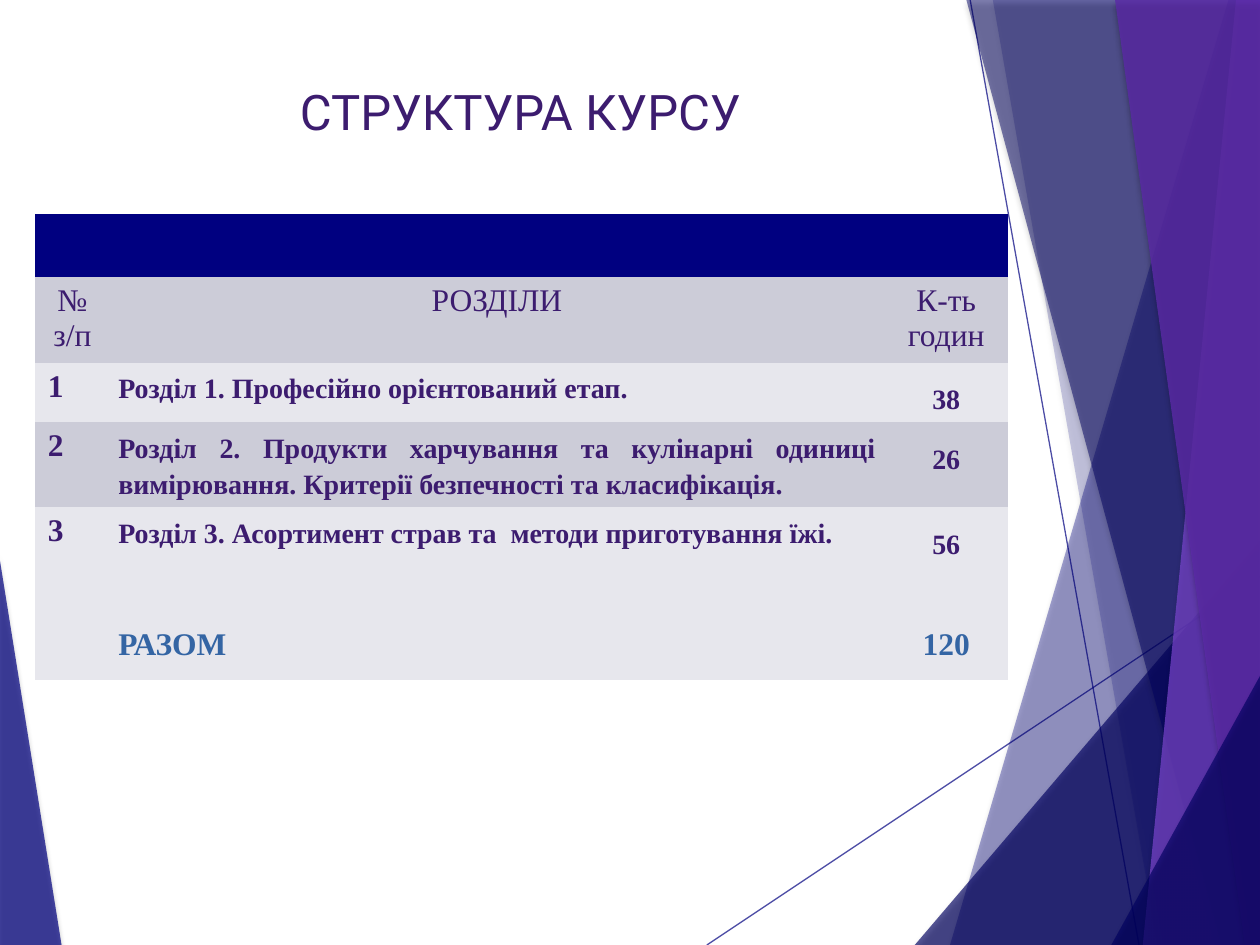
from typing import NamedTuple, Optional

from lxml import etree
from pptx import Presentation
from pptx import util as u
from pptx.dml.color import RGBColor
from pptx.enum import shapes, text
from pptx.oxml.ns import qn

W, H = u.Inches(10), u.Inches(7.5)
NAVY, DEEP, INK, BLUE = "000080", "000060", "3C1C6F", "3465A4"
DARK_ROW, LIGHT_ROW = "CCCCD8", "E7E7ED"
SERIF = "Times New Roman"
NO_STYLE = "{2D5ABB26-0587-4C30-8999-92F81FD0307C}"
LEFT, CENTER, JUSTIFY = (text.PP_ALIGN.LEFT, text.PP_ALIGN.CENTER,
                         text.PP_ALIGN.JUSTIFY)


class Shard(NamedTuple):
    """A translucent polygon; points are percent of the slide."""
    color: str
    alpha: int
    points: list


class Entry(NamedTuple):
    """The text of one table cell."""
    words: str
    align: text.PP_ALIGN = CENTER
    size: int = 18
    bold: bool = True
    color: str = INK
    spacing: Optional[float] = None
    after: int = 0
    inset: float = 0.07
    middle: bool = False


def x(share: float) -> int:
    return round(W * share / 100)


def y(share: float) -> int:
    return round(H * share / 100)


def rgb(color: str) -> RGBColor:
    return RGBColor.from_string(color)


def set_alpha(parent, alpha: int) -> None:
    clr = next(parent.iter(qn("a:srgbClr")))
    etree.SubElement(clr, qn("a:alpha"), val=str(alpha * 1000))


def draw_shard(s, shard: Shard) -> None:
    start, *rest = [(x(px), y(py)) for px, py in shard.points]
    fb = s.shapes.build_freeform(*start)
    fb.add_line_segments(rest, close=True)
    sp = fb.convert_to_shape()
    sp.fill.solid()
    sp.fill.fore_color.rgb = rgb(shard.color)
    sp.line.fill.background()
    sp.shadow.inherit = False
    props = sp._element.spPr
    set_alpha(props, shard.alpha)
    shadow = etree.SubElement(
        props.find(qn("a:effectLst")), qn("a:outerShdw"),
        blurRad=str(u.Pt(3)), dist=str(u.Pt(2)), dir="5400000")
    etree.SubElement(shadow, qn("a:srgbClr"), val="000000")
    set_alpha(shadow, 35)


def draw_line(s, x1: float, y1: float, x2: float, y2: float) -> None:
    line = s.shapes.add_connector(shapes.MSO_CONNECTOR.STRAIGHT,
                                  x(x1), y(y1), x(x2), y(y2))
    line.line.color.rgb = rgb(NAVY)
    line.line.width = u.Pt(0.75)
    props = line._element.spPr
    set_alpha(props, 70)
    etree.SubElement(props, qn("a:effectLst"))


def style(p, align, size: int, font: str, color: str, bold: bool) -> None:
    p.alignment = align
    p.font.size, p.font.name, p.font.bold = u.Pt(size), font, bold
    p.font.color.rgb = rgb(color)


def fill_cell(cell, color: str, entry: Optional[Entry]) -> None:
    cell.fill.solid()
    cell.fill.fore_color.rgb = rgb(color)
    if entry is None:
        return
    cell.margin_left = cell.margin_right = u.Inches(entry.inset)
    if entry.middle:
        cell.vertical_anchor = text.MSO_ANCHOR.MIDDLE
    p = cell.text_frame.paragraphs[0]
    p.text = entry.words
    style(p, entry.align, entry.size, SERIF, entry.color, entry.bold)
    if entry.spacing:
        p.line_spacing = entry.spacing
        p.space_after = u.Pt(entry.after)


def heading(words: str) -> Entry:
    return Entry(words, bold=False, inset=0.1)


def section(number: int, title: str, hours: int, **hours_style) -> list:
    return [Entry(str(number), LEFT, inset=0.1),
            Entry(title, JUSTIFY, 16, spacing=1.15, after=10),
            Entry(str(hours), size=16, spacing=1.5, **hours_style)]


LEFT_SHARD = Shard(NAVY, 70, [(-0.1, 58.5), (4.9, 100.1), (-0.1, 100)])
RIGHT_SHARDS = [
    Shard(NAVY, 36, [(97.5, 0), (75.4, 100), (100.1, 100), (100.1, 0)]),
    Shard(NAVY, 20, [(78.8, 0), (91.9, 100), (100.1, 100), (100.1, 0)]),
    Shard(DEEP, 66, [(72.6, 100), (100, 57.2), (100.1, 100)]),
    Shard(DEEP, 50, [(76.7, 0), (96.9, 100), (100.1, 100), (100.1, 0)]),
    Shard("7B46D0", 70, [(98.1, 0), (90.7, 100), (100.1, 100), (100, 0)]),
    Shard("5A2AA6", 82, [(88.5, 0), (98.8, 100), (100.2, 100), (100, 0)]),
    Shard(DEEP, 66, [(88.2, 100), (100.1, 71.3), (100.2, 100)]),
]
LINES = [(56.1, 100, 100.1, 60.9), (77, 0, 90.4, 100)]

COLUMNS = [5.9, 61.5, 9.8]  # percent of slide width
# Each row: height in percent of slide height, fill, cell texts
ROWS = [
    (6.67, NAVY, [None] * 3),
    (9.1, DARK_ROW, [heading("№ з/п"), heading("РОЗДІЛИ"),
                     heading("К-ть годин")]),
    (6.25, LIGHT_ROW, section(1, "Розділ 1. Професійно орієнтований етап.",
                              38, after=10, middle=True)),
    (9, DARK_ROW, section(2, "Розділ 2. Продукти харчування та кулінарні "
                          "одиниці вимірювання. Критерії безпечності та "
                          "класифікація.", 26)),
    (6.2, LIGHT_ROW, section(3, "Розділ 3. Асортимент страв та  методи "
                             "приготування їжі.", 56)),
    (5.8, LIGHT_ROW, [None] * 3),
    (6.2, LIGHT_ROW, [None, Entry("РАЗОМ", LEFT, color=BLUE),
                      Entry("120", color=BLUE)]),
]


def draw_table(s) -> None:
    frame = s.shapes.add_table(
        len(ROWS), len(COLUMNS), x(2.8), y(22.65), x(sum(COLUMNS)),
        y(sum(height for height, _, _ in ROWS)))
    table = frame.table
    table.first_row = table.horz_banding = False
    table._tbl.tblPr.find(qn("a:tableStyleId")).text = NO_STYLE
    for column, share in zip(table.columns, COLUMNS):
        column.width = x(share)
    for i, (height, color, entries) in enumerate(ROWS):
        table.rows[i].height = y(height)
        for j, entry in enumerate(entries):
            fill_cell(table.cell(i, j), color, entry)
    table.cell(0, 0).merge(table.cell(0, 2))


def draw_title(s) -> None:
    tf = s.shapes.add_textbox(x(16.3), y(8), x(50), y(7.5)).text_frame
    tf.word_wrap = True
    p = tf.paragraphs[0]
    p.text = "СТРУКТУРА КУРСУ"
    style(p, CENTER, 28, "Roboto", INK, False)


def main() -> None:
    prs = Presentation()
    prs.slide_width, prs.slide_height = W, H
    s = prs.slides.add_slide(prs.slide_layouts[6])
    # Decorative background
    draw_shard(s, LEFT_SHARD)
    for line in LINES:
        draw_line(s, *line)
    for shard in RIGHT_SHARDS:
        draw_shard(s, shard)
    # Content
    draw_table(s)
    draw_title(s)
    prs.save("out.pptx")


if __name__ == "__main__":
    main()
